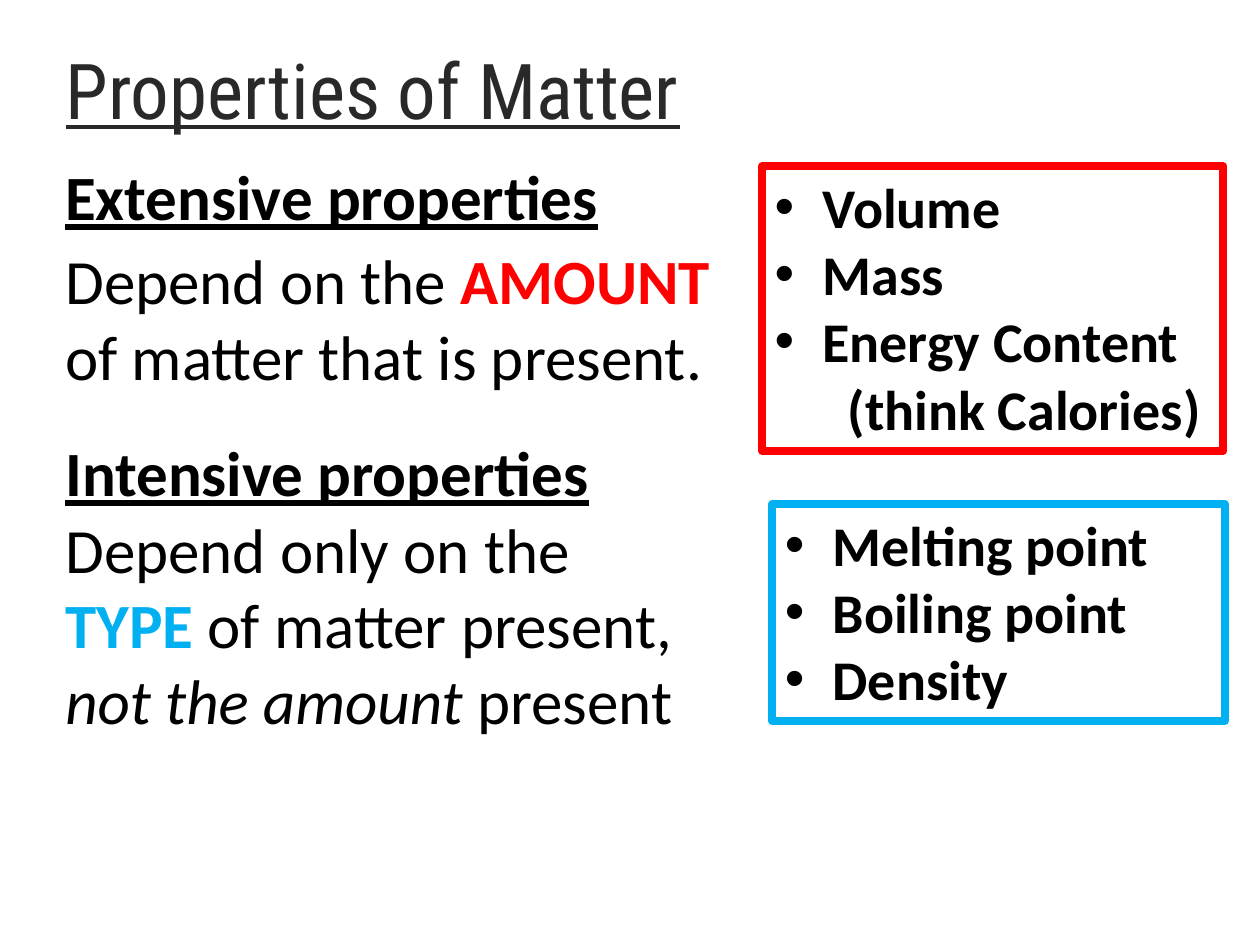
from dataclasses import dataclass

from lxml.etree import SubElement
from pptx import Presentation
from pptx.dml.color import RGBColor
from pptx.enum.shapes import MSO_SHAPE
from pptx.enum.text import MSO_ANCHOR, MSO_AUTO_SIZE, PP_ALIGN
from pptx.oxml.ns import qn
from pptx.util import Inches, Pt


@dataclass(frozen=True)
class Theme:
    head: str = "Roboto Condensed"
    body: str = "Calibri"
    gray: str = "292929"
    black: str = "000000"
    red: str = "FF0000"
    blue: str = "00B0F0"
    title: int = 44
    text: int = 36
    item: int = 32
    border: float = 4.5
    hang: float = 0.38


class Deck:
    def __init__(self, theme):
        self.theme = theme
        self.prs = Presentation()
        self.prs.slide_width = Inches(10)
        self.prs.slide_height = Inches(7.5)
        self.slide = self.prs.slides.add_slide(self.prs.slide_layouts[5])

    def run(self, para, text, size, color=None, face=None, bold=False,
            italic=False, line=False):
        run = para.add_run()
        run.text = text
        font = run.font
        font.name = face or self.theme.body
        font.size = Pt(size)
        font.color.rgb = RGBColor.from_string(color or self.theme.black)
        font.bold, font.italic, font.underline = bold, italic, line

    def title(self, text, *area):
        shape = self.slide.shapes.title
        shape.left, shape.top, shape.width, shape.height = map(Inches, area)
        frame = shape.text_frame
        frame.auto_size = MSO_AUTO_SIZE.NONE
        frame.vertical_anchor = MSO_ANCHOR.MIDDLE
        para = frame.paragraphs[0]
        para.alignment = PP_ALIGN.LEFT
        self.run(para, text, self.theme.title, self.theme.gray,
                 self.theme.head, line=True)

    def text(self, runs, *area):
        """Add a text box from (text, run style) pairs."""
        frame = self.slide.shapes.add_textbox(*map(Inches, area)).text_frame
        frame.word_wrap = True
        for words, style in runs:
            self.run(frame.paragraphs[0], words, self.theme.text, **style)

    def indent(self, para, left, first=0, mark=None):
        props = para._p.get_or_add_pPr()
        props.set("marL", str(Inches(left)))
        props.set("indent", str(Inches(first)))
        if mark:
            SubElement(props, qn("a:buFont"), typeface="Arial")
            SubElement(props, qn("a:buChar"), char=mark)

    def box(self, items, color, *area, note=None):
        """Add a framed bullet list, with an optional unmarked last line."""
        shape = self.slide.shapes.add_shape(MSO_SHAPE.RECTANGLE,
                                            *map(Inches, area))
        shape.shadow.inherit = False
        shape.fill.background()
        shape.line.color.rgb = RGBColor.from_string(color)
        shape.line.width = Pt(self.theme.border)
        frame = shape.text_frame
        frame.word_wrap = True
        frame.vertical_anchor = MSO_ANCHOR.TOP
        hang = self.theme.hang
        lines = [(item, hang, -hang, "•") for item in items]
        if note:
            lines.append((note, hang + 0.2, 0, None))
        for i, (words, left, first, mark) in enumerate(lines):
            para = frame.add_paragraph() if i else frame.paragraphs[0]
            para.alignment = PP_ALIGN.LEFT
            self.indent(para, left, first, mark)
            self.run(para, words, self.theme.item, bold=True)


def main():
    theme = Theme()
    deck = Deck(theme)
    left = 0.42
    plain = {}
    head = {"bold": True, "line": True}

    deck.title("Properties of Matter", left, 0.33, 7.73, 0.75)

    deck.text([("Extensive properties", head)], left, 1.2, 8.5, 0.71)
    deck.text([("Depend on the ", plain),
               ("AMOUNT", {"color": theme.red, "bold": True}),
               (" of matter that is present.", plain)],
              left, 1.87, 5.49, 1.31)
    deck.box(["Volume", "Mass", "Energy Content"], theme.red,
             6.05, 1.32, 3.66, 2.26, note="(think Calories)")

    deck.text([("Intensive properties", head)], left, 3.39, 8.5, 0.71)
    deck.text([("Depend only on the ", plain),
               ("TYPE ", {"color": theme.blue, "bold": True}),
               ("of matter present, ", plain),
               ("not the amount ", {"italic": True}),
               ("present", plain)],
              left, 4, 5.25, 1.92)
    deck.box(["Melting point", "Boiling point", "Density"], theme.blue,
             6.13, 4, 3.59, 1.72)

    deck.prs.save("out.pptx")


if __name__ == "__main__":
    main()
